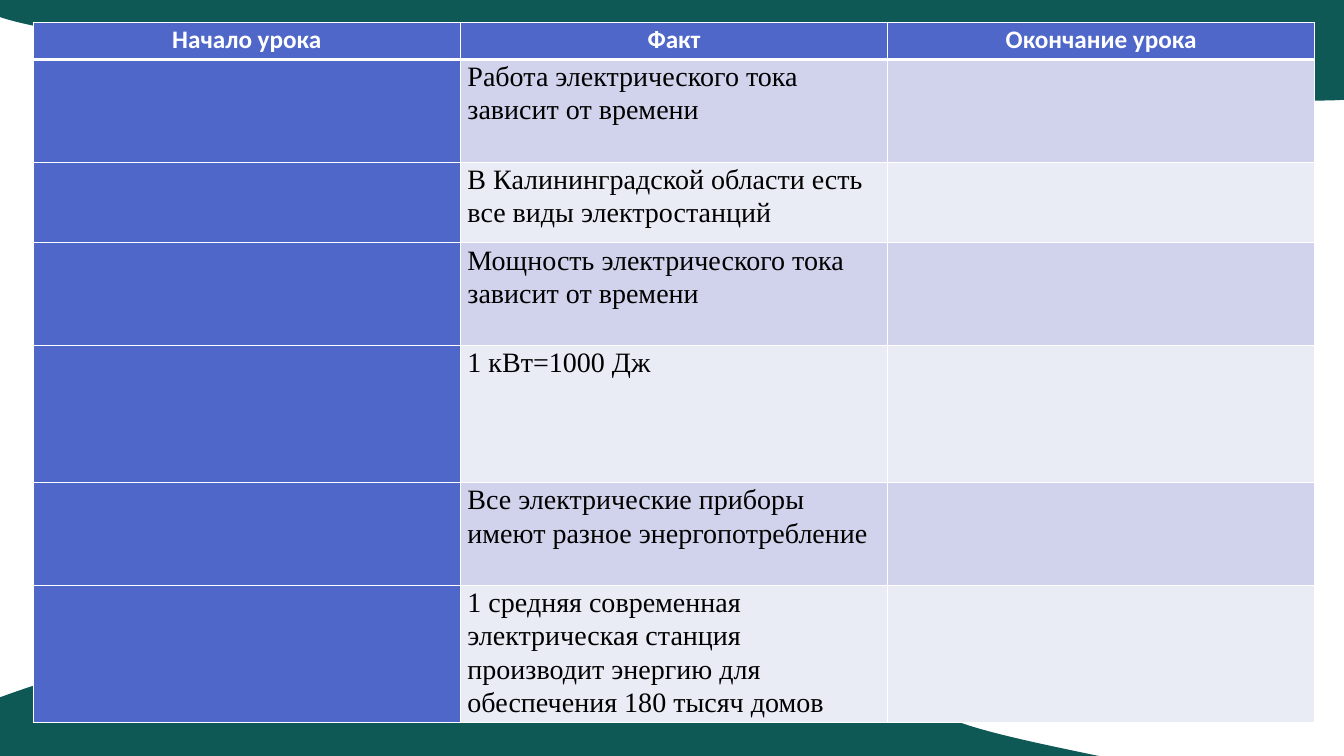
from lxml.etree import SubElement
from pptx import Presentation
from pptx.dml.color import RGBColor
from pptx.enum.text import MSO_ANCHOR, PP_ALIGN
from pptx.oxml.ns import qn
from pptx.util import Pt

PX = 9144
SLIDE_SIZE = (1333, 750)
COLORS = {
    "wave": "0E5856",
    "accent": "4E67C8",
    "odd": "D0D3EB",
    "even": "E9EBF5",
    "white": "FFFFFF",
    "black": "000000",
}
BOTTOM_WAVE = [
    (5, 110),
    (-36, 91), (176, 7), (238, 0),
    (301, -6), (475, 67), (627, 50),
    (779, 32), (1014, 14), (1073, 47),
    (1133, 79), (1420, 111), (1386, 143),
    (1352, 176), (713, 117), (483, 112),
    (253, 106), (46, 129), (5, 110),
]
TOP_WAVE = [
    (1424, 5),
    (1497, 25), (1440, 131), (1382, 152),
    (1323, 174), (1043, 127), (907, 116),
    (771, 104), (654, 68), (566, 85),
    (476, 93), (391, 115), (297, 110),
    (202, 104), (-33, 86), (-1, 52),
    (32, 17), (710, 39), (947, 31),
    (1185, 23), (1352, -15), (1424, 5),
]
HEADERS = ["Начало урока", "Факт", "Окончание урока"]
FACTS = [
    ("Работа электрического тока зависит от времени", 102),
    ("В Калининградской области есть все виды электростанций", 80),
    ("Мощность электрического тока зависит от времени", 102),
    ("1 кВт=1000 Дж", 136),
    ("Все электрические приборы имеют разное энергопотребление", 102),
    ("1 средняя современная электрическая станция производит энергию "
     "для обеспечения 180 тысяч домов", 136),
]
HEADER_HEIGHT = 37


def rgb(name):
    """Return the named colour."""
    return RGBColor.from_string(COLORS[name])


def bend_outline(shape, nodes, width, height):
    """Turn the straight outline of a shape into cubic curves."""
    outline = next(shape._element.iter(qn("a:path")))
    outline.set("w", str(width * PX))
    outline.set("h", str(height * PX))
    for command in list(outline):
        outline.remove(command)
    steps = [("a:moveTo", nodes[:1])]
    steps += [("a:cubicBezTo", nodes[i:i + 3]) for i in range(1, len(nodes), 3)]
    for tag, points in steps:
        command = SubElement(outline, qn(tag))
        for x, y in points:
            SubElement(command, qn("a:pt"), x=str(x * PX), y=str(y * PX))
    SubElement(outline, qn("a:close"))


def add_wave(slide, left, top, width, height, nodes):
    """Draw a filled wave whose nodes are relative to its box."""
    anchors = nodes[::3]
    builder = slide.shapes.build_freeform(*anchors[0], scale=PX)
    builder.add_line_segments(anchors[1:], close=True)
    shape = builder.convert_to_shape()
    bend_outline(shape, nodes, width, height)
    shape.left, shape.top = left * PX, top * PX
    shape.width, shape.height = width * PX, height * PX
    shape.shadow.inherit = False
    shape.fill.solid()
    shape.fill.fore_color.rgb = rgb("wave")
    shape.line.fill.background()


def add_borders(cell, top, bottom):
    """Give a cell white borders, one point wide at the sides."""
    properties = cell._tc.get_or_add_tcPr()
    for side, width in (("L", 1), ("R", 1), ("T", top), ("B", bottom)):
        line = SubElement(properties, qn(f"a:ln{side}"), w=str(Pt(width)))
        fill = SubElement(line, qn("a:solidFill"))
        SubElement(fill, qn("a:srgbClr"), val=COLORS["white"])


def write_cell(cell, text, font_name, size, color, bold, alignment):
    """Write and format the text of a cell."""
    cell.text_frame.text = text
    cell.vertical_anchor = MSO_ANCHOR.TOP
    cell.margin_left = cell.margin_right = 7 * PX
    cell.margin_top = cell.margin_bottom = 0
    paragraph = cell.text_frame.paragraphs[0]
    paragraph.alignment = alignment
    paragraph.line_spacing = 1.07
    font = paragraph.runs[0].font
    font.name, font.size, font.bold = font_name, Pt(size), bold
    font.color.rgb = rgb(color)


def add_fact_table(slide, left, top, width):
    """Place the table of facts with a header row and an accent column."""
    heights = [HEADER_HEIGHT] + [height for _, height in FACTS]
    frame = slide.shapes.add_table(
        len(heights), len(HEADERS), left * PX, top * PX, width * PX, sum(heights) * PX)
    table = frame.table
    table.first_col = True
    for column in table.columns:
        column.width = width * PX // len(HEADERS)
    for row_index, height in enumerate(heights):
        table.rows[row_index].height = height * PX
        for column_index, header in enumerate(HEADERS):
            cell = table.cell(row_index, column_index)
            add_borders(cell, 3 if row_index == 1 else 1, 3 if row_index == 0 else 1)
            accented = row_index == 0 or column_index == 0
            band = "odd" if row_index % 2 else "even"
            cell.fill.solid()
            cell.fill.fore_color.rgb = rgb("accent" if accented else band)
            if row_index == 0:
                write_cell(cell, header, "Calibri", 18, "white", True, PP_ALIGN.CENTER)
            elif column_index == 1:
                write_cell(cell, FACTS[row_index - 1][0], "Times New Roman", 20,
                           "black", False, PP_ALIGN.LEFT)


def main():
    """Build and save the presentation."""
    presentation = Presentation()
    presentation.slide_width, presentation.slide_height = (side * PX for side in SLIDE_SIZE)
    slide = presentation.slides.add_slide(presentation.slide_layouts[6])
    add_wave(slide, -137, 663, 1389, 153, BOTTOM_WAVE)
    add_wave(slide, -20, -58, 1460, 193, TOP_WAVE)
    add_fact_table(slide, 33, 22, 1271)
    presentation.save("out.pptx")


if __name__ == "__main__":
    main()
